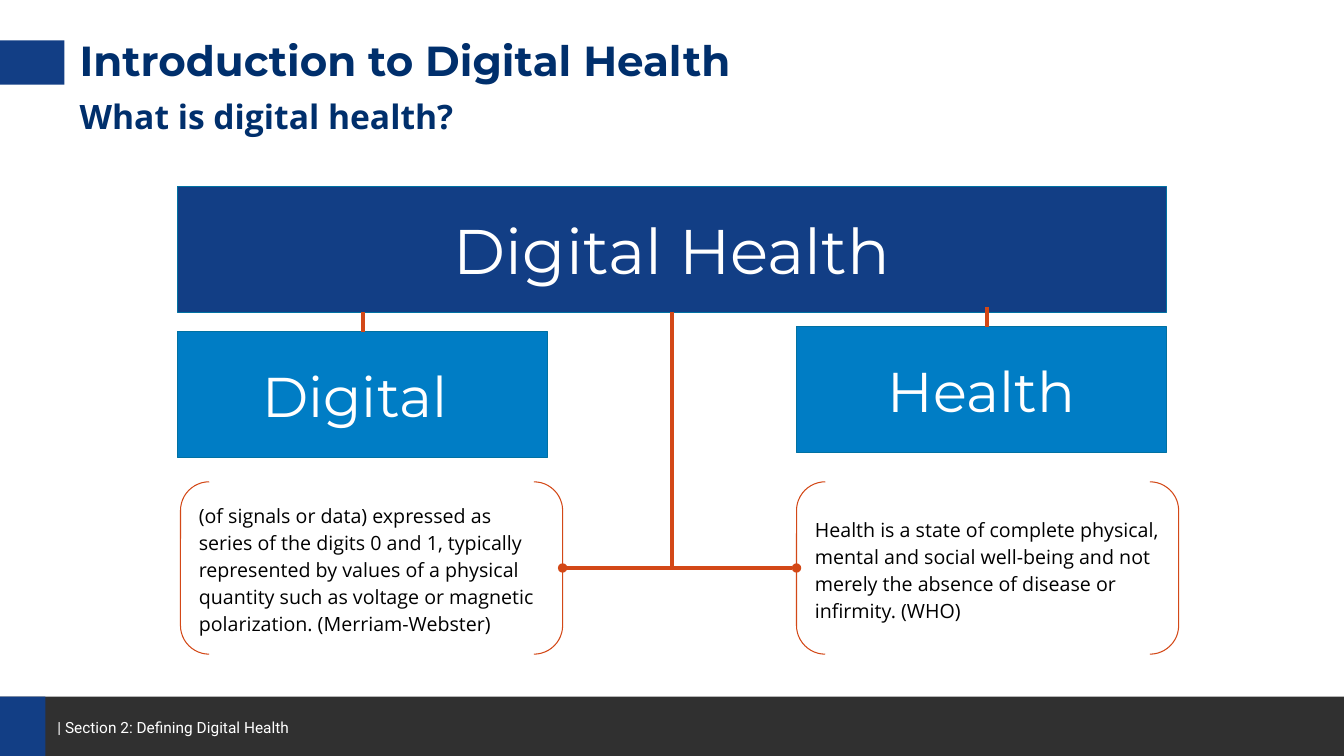
from lxml import etree
from pptx import Presentation
from pptx.dml.color import RGBColor
from pptx.enum.shapes import MSO_CONNECTOR, MSO_SHAPE
from pptx.enum.text import MSO_ANCHOR as Anchor, PP_ALIGN as Align
from pptx.oxml.ns import qn
from pptx.util import Inches, Pt

COLORS = {
    "navy": "123E85", "title": "002F6C", "blue": "007DC5", "edge": "0071A2",
    "accent": "D34817", "footer": "303030", "white": "FFFFFF", "black": "000000",
}
WIDTH, HEIGHT = 13.33, 7.5
BOX_INSETS = (0.1, 0.05, 0.1, 0.05)


def color(name):
    return RGBColor.from_string(COLORS[name])


def write(shape, text, font, size, ink, bold=False, align=Align.LEFT,
          anchor=Anchor.MIDDLE, insets=BOX_INSETS, spacing=1.0):
    frame = shape.text_frame
    frame.word_wrap = True
    frame.vertical_anchor = anchor
    (frame.margin_left, frame.margin_top,
     frame.margin_right, frame.margin_bottom) = map(Inches, insets)
    paragraph = frame.paragraphs[0]
    paragraph.text = text
    paragraph.alignment = align
    paragraph.line_spacing = spacing
    paragraph.font.name = font
    paragraph.font.size = Pt(size)
    paragraph.font.bold = bold
    paragraph.font.color.rgb = color(ink)


def add_text(slide, box, *args, **options):
    write(slide.shapes.add_textbox(*map(Inches, box)), *args, **options)


def add_box(slide, box, fill=None, line=None, weight=1, kind=MSO_SHAPE.RECTANGLE):
    shape = slide.shapes.add_shape(kind, *map(Inches, box))
    shape.shadow.inherit = False
    if fill:
        shape.fill.solid()
        shape.fill.fore_color.rgb = color(fill)
    else:
        shape.fill.background()
    if line:
        shape.line.color.rgb = color(line)
        shape.line.width = Pt(weight)
    else:
        shape.line.fill.background()
    return shape


def add_link(slide, start, end, dots=False):
    """Draw a straight accent line, with round ends if dots is set."""
    link = slide.shapes.add_connector(
        MSO_CONNECTOR.STRAIGHT, *map(Inches, (*start, *end)))
    link.line.color.rgb = color("accent")
    link.line.width = Pt(2.25)
    if dots:
        outline = link.line._get_or_add_ln()
        for end_tag in ("a:headEnd", "a:tailEnd"):
            etree.SubElement(outline, qn(end_tag), type="oval")
    etree.SubElement(link._element.spPr, qn("a:effectLst"))


def add_footer(slide, left, top, width, height):
    add_box(slide, (left, top, width, height), "footer")
    add_box(slide, (left, top, 0.45, height), "navy")
    add_text(slide, (left + 0.57, top + 0.21, 2.8, 0.2),
             "| Section 2: Defining Digital Health", "Roboto", 11, "white",
             anchor=Anchor.TOP, insets=(0, 0, 0, 0))


def add_heading(slide, left, top, width):
    add_box(slide, (-0.22, top + 0.34, 0.86, 0.44), "navy")
    add_text(slide, (left, top, width, 0.79), "Introduction to Digital Health",
             "Montserrat", 30, "title", bold=True, anchor=Anchor.BOTTOM,
             insets=(0.02, 0, 0.39, 0), spacing=0.9)
    add_text(slide, (left, top + 0.91, width, 0.32), "What is digital health?",
             "Open Sans", 24, "title", bold=True,
             insets=(0.02, 0, 0.02, 0), spacing=1.1)


def add_term(slide, box, text, size, fill):
    write(add_box(slide, box, fill, "edge"), text, "Montserrat", size, "white",
          align=Align.CENTER)


def add_definition(slide, box, text):
    bracket = add_box(slide, box, line="accent", weight=0.75,
                      kind=MSO_SHAPE.DOUBLE_BRACKET)
    write(bracket, text, "Open Sans", 14, "black", spacing=1.15)


def add_diagram(slide, left, top, width):
    term_width, term_height = 3.67, 1.25
    bracket_width, bracket_height = 3.79, 1.71
    bar_bottom = top + term_height
    bracket_top = top + 2.93
    middle = bracket_top + bracket_height / 2
    right = left + width - term_width
    center = left + width / 2

    add_term(slide, (left, top, width, term_height), "Digital Health", 45, "navy")
    branches = [
        (left, left + 0.03, 3.6, 0.19, "Digital ",
         "(of signals or data) expressed as series of the digits 0 and 1, typically "
         "represented by values of a physical quantity such as voltage or magnetic "
         "polarization. (Merriam-Webster)"),
        (right, right, 9.79, 0.14, "Health",
         "Health is a state of complete physical, mental and social well-being and "
         "not merely the absence of disease or infirmity. (WHO)"),
    ]
    for term_left, bracket_left, link_x, gap, term, definition in branches:
        term_top = bar_bottom + gap
        add_term(slide, (term_left, term_top, term_width, term_height),
                 term, 40, "blue")
        add_definition(slide, (bracket_left, bracket_top, bracket_width,
                               bracket_height), definition)
        add_link(slide, (link_x, term_top - 0.19), (link_x, term_top))
    add_link(slide, (left + 0.03 + bracket_width, middle), (right, middle), dots=True)
    add_link(slide, (center, bar_bottom), (center, middle))


def main():
    presentation = Presentation()
    presentation.slide_width = Inches(WIDTH)
    presentation.slide_height = Inches(HEIGHT)
    slide = presentation.slides.add_slide(presentation.slide_layouts[6])
    add_footer(slide, 0, HEIGHT - 0.59, WIDTH, 0.59)
    add_heading(slide, 0.77, 0.06, 9.93)
    add_diagram(slide, 1.76, 1.85, 9.81)
    presentation.save("out.pptx")


if __name__ == "__main__":
    main()
